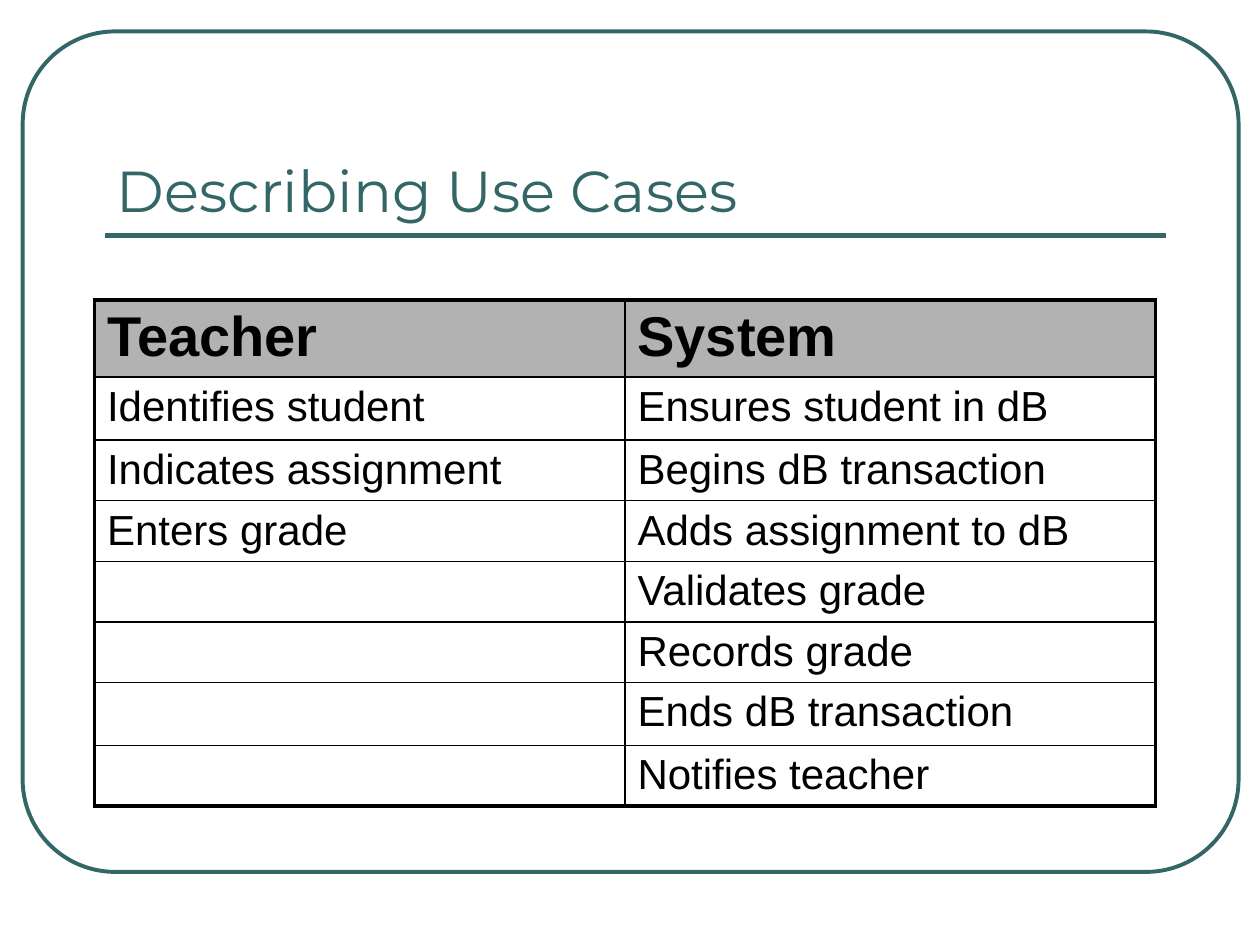
"""Build a slide with a two-column use case table."""
from lxml.etree import SubElement as Sub
from pptx import Presentation
from pptx.dml.color import RGBColor
from pptx.enum.shapes import MSO_CONNECTOR as Link, MSO_SHAPE as Form
from pptx.enum.text import MSO_ANCHOR as Anchor
from pptx.oxml.ns import qn
from pptx.util import Inches, Pt

WIDE, HIGH = 10, 7.5
TEAL, BLACK, GRAY, WHITE = "336666", "000000", "B2B2B2", "FFFFFF"
TITLE = "Describing Use Cases"
HEADS = ("Teacher", "System")
STEPS = [
    ("Identifies student", "Ensures student in dB"),
    ("Indicates assignment", "Begins dB transaction"),
    ("Enters grade", "Adds assignment to dB"),
    ("", "Validates grade"),
    ("", "Records grade"),
    ("", "Ends dB transaction"),
    ("", "Notifies teacher"),
]
ROWS = (0.6, 0.5, 0.47, 0.47, 0.47, 0.47, 0.5, 0.47)
LEFT, SPAN = 0.83, 8.42
THIN, THICK = 1, 2.25


def tint(code):
    return RGBColor.from_string(code)


def box(*nums):
    return [Inches(n) for n in nums]


def write(frame, text, size, font, code, bold=False):
    run = frame.paragraphs[0].add_run()
    run.text = text
    run.font.size, run.font.name, run.font.bold = Pt(size), font, bold
    run.font.color.rgb = tint(code)


def edge(cell, side, width):
    line = Sub(cell._tc.get_or_add_tcPr(), qn("a:ln" + side), w=str(Pt(width)))
    Sub(Sub(line, qn("a:solidFill")), qn("a:srgbClr"), val=BLACK)


def frame_slide(slide):
    ring = slide.shapes.add_shape(Form.ROUNDED_RECTANGLE, *box(0.18, 0.25, 9.65, 6.67))
    ring.adjustments[0] = 0.11
    ring.shadow.inherit = False
    ring.fill.background()
    rule = slide.shapes.add_connector(
        Link.STRAIGHT, *box(LEFT, 1.87, LEFT + SPAN, 1.87))
    Sub(rule._element.spPr, qn("a:effectLst"))
    for item, width in ((ring, 2.25), (rule, 3)):
        item.line.color.rgb = tint(TEAL)
        item.line.width = Pt(width)


def add_title(slide):
    frame = slide.shapes.add_textbox(*box(LEFT, 0.58, SPAN, 1.25)).text_frame
    frame.word_wrap = True
    frame.vertical_anchor = Anchor.BOTTOM
    write(frame, TITLE, 33, "Montserrat", TEAL)


def add_steps(slide):
    data = [HEADS] + STEPS
    rows, cols = len(data), len(HEADS)
    table = slide.shapes.add_table(
        rows, cols, *box(0.75, 2.38, SPAN, sum(ROWS))).table
    for col in table.columns:
        col.width = Inches(SPAN / cols)
    for r, texts in enumerate(data):
        table.rows[r].height = Inches(ROWS[r])
        for c, text in enumerate(texts):
            cell = table.cell(r, c)
            cell.margin_top, cell.margin_bottom = box(0.05, 0.03)
            outer = {"L": c == 0, "R": c == cols - 1,
                     "T": r == 0, "B": r == rows - 1}
            for side, thick in outer.items():
                edge(cell, side, THICK if thick else THIN)
            cell.fill.solid()
            cell.fill.fore_color.rgb = tint(WHITE if r else GRAY)
            if text:
                write(cell.text_frame, text, 24 if r else 32, "Arial", BLACK, r == 0)


def main():
    deck = Presentation()
    deck.slide_width, deck.slide_height = box(WIDE, HIGH)
    slide = deck.slides.add_slide(deck.slide_layouts[6])
    frame_slide(slide)
    add_title(slide)
    add_steps(slide)
    deck.save("out.pptx")


if __name__ == "__main__":
    main()
